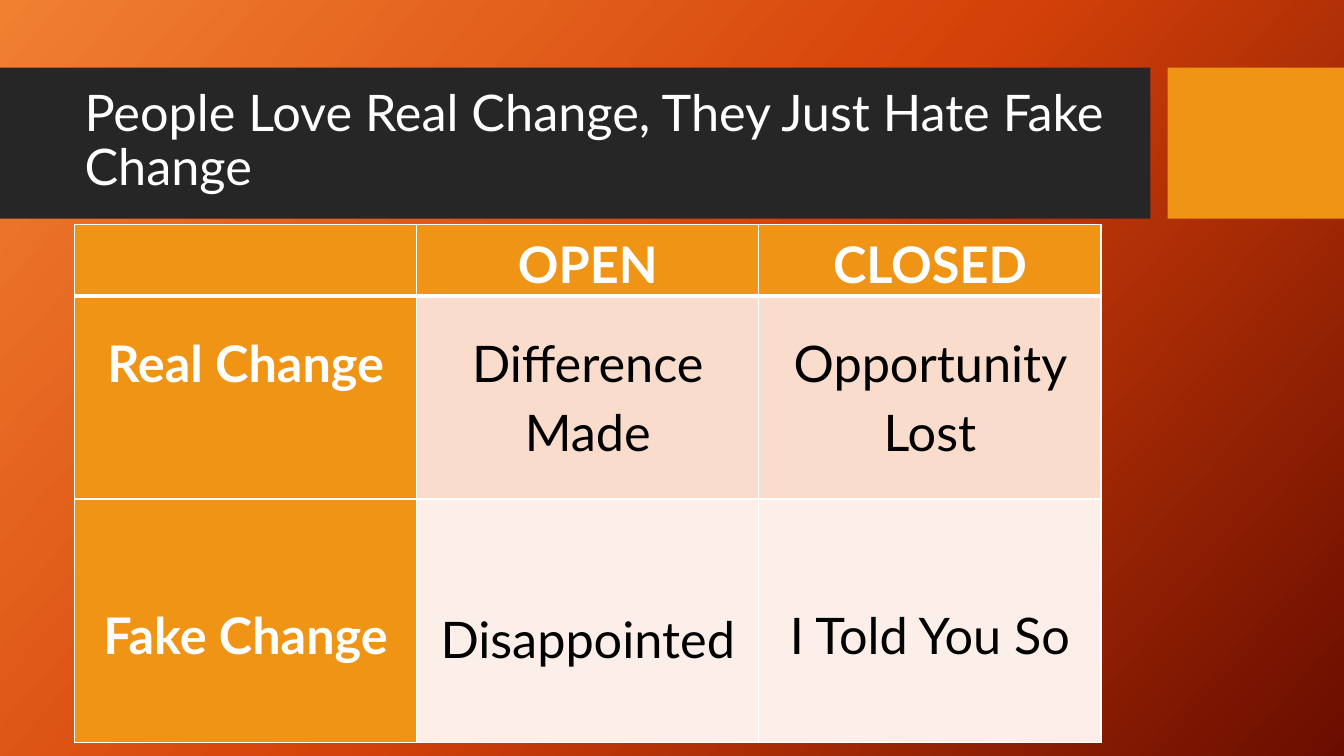
import copy
import pptx
import pptx.util
import pptx.dml.color
import pptx.enum.shapes
import pptx.enum.text
import pptx.oxml
import pptx.oxml.ns

TITLE = "People Love Real Change, They Just Hate Fake Change"
ROWS = [
    ["", "OPEN", "CLOSED"],
    ["Real Change", "Difference Made", "Opportunity Lost"],
    ["Fake Change", "Disappointed", "I Told You So"],
]
HIGHS = [0.71, 2.01, 2.42]
TOPS = [[0, 0, 0], [0.27, 0.27, 0.27], [0.96, 1, 0.96]]
TINTS = ["F09415", "F9DCCC", "FCEEE8"]
STOPS = [(0, "F18031"), (0.5, "D54209"), (1, "6A0D00")]
BANDS = [(0, 11.41, "262626"), (11.58, 1.75, "F09415")]
WIDE, HIGH = 13.33, 7.5
LEFT, TOP, SPAN = 0.74, 2.23, 10.18
FONT, SIZE = "Lato", 36

inch = pptx.util.Inches


def color(code):
    return pptx.dml.color.RGBColor.from_string(code)


def style(par, code, bold, space):
    par.line_spacing = space
    par.font.name = FONT
    par.font.size = pptx.util.Pt(SIZE)
    par.font.bold = bold
    par.font.color.rgb = color(code)


def border(cell, side, width):
    space = pptx.oxml.ns.nsdecls("a")
    line = pptx.oxml.parse_xml(
        f'<a:ln{side} {space} w="{pptx.util.Pt(width)}"><a:solidFill>'
        f'<a:srgbClr val="FFFFFF"/></a:solidFill></a:ln{side}>')
    cell._tc.get_or_add_tcPr().append(line)


def backdrop(slide):
    fill = slide.background.fill
    fill.gradient()
    fill.gradient_angle = 318
    stops = slide._element.xpath(".//a:gsLst")[0]
    stops.append(copy.deepcopy(stops[0]))
    for stop, (place, code) in zip(fill.gradient_stops, STOPS):
        stop.position = place
        stop.color.rgb = color(code)


def banner(slide):
    for left, width, code in BANDS:
        band = slide.shapes.add_shape(
            pptx.enum.shapes.MSO_SHAPE.RECTANGLE,
            inch(left), inch(0.67), inch(width), inch(1.5))
        band.shadow.inherit = False
        band.fill.solid()
        band.fill.fore_color.rgb = color(code)
        band.line.fill.background()
    box = slide.shapes.add_textbox(inch(LEFT), inch(0.82), inch(10.51), inch(1.18))
    frame = box.text_frame
    frame.word_wrap = True
    frame.vertical_anchor = pptx.enum.text.MSO_ANCHOR.MIDDLE
    frame.text = TITLE
    style(frame.paragraphs[0], "FFFFFF", False, 0.9)


def matrix(slide):
    count = len(ROWS[0])
    table = slide.shapes.add_table(
        len(ROWS), count, inch(LEFT), inch(TOP), inch(SPAN), inch(sum(HIGHS))).table
    for col in table.columns:
        col.width = inch(SPAN / count)
    for r, texts in enumerate(ROWS):
        table.rows[r].height = inch(HIGHS[r])
        for c, text in enumerate(texts):
            cell = table.cell(r, c)
            head = r == 0 or c == 0
            cell.margin_left = cell.margin_right = inch(0.07)
            cell.margin_top = inch(TOPS[r][c])
            cell.margin_bottom = 0
            for side in "LRTB":
                thick = (side, r) in [("B", 0), ("T", 1)]
                border(cell, side, 3 if thick else 1)
            cell.fill.solid()
            cell.fill.fore_color.rgb = color(TINTS[0 if head else r])
            if text:
                cell.text = text
                par = cell.text_frame.paragraphs[0]
                par.alignment = pptx.enum.text.PP_ALIGN.CENTER
                style(par, "FFFFFF" if head else "000000", head, 1.15)


def main():
    deck = pptx.Presentation()
    deck.slide_width, deck.slide_height = inch(WIDE), inch(HIGH)
    slide = deck.slides.add_slide(deck.slide_layouts[6])
    backdrop(slide)
    banner(slide)
    matrix(slide)
    deck.save("out.pptx")


if __name__ == "__main__":
    main()
